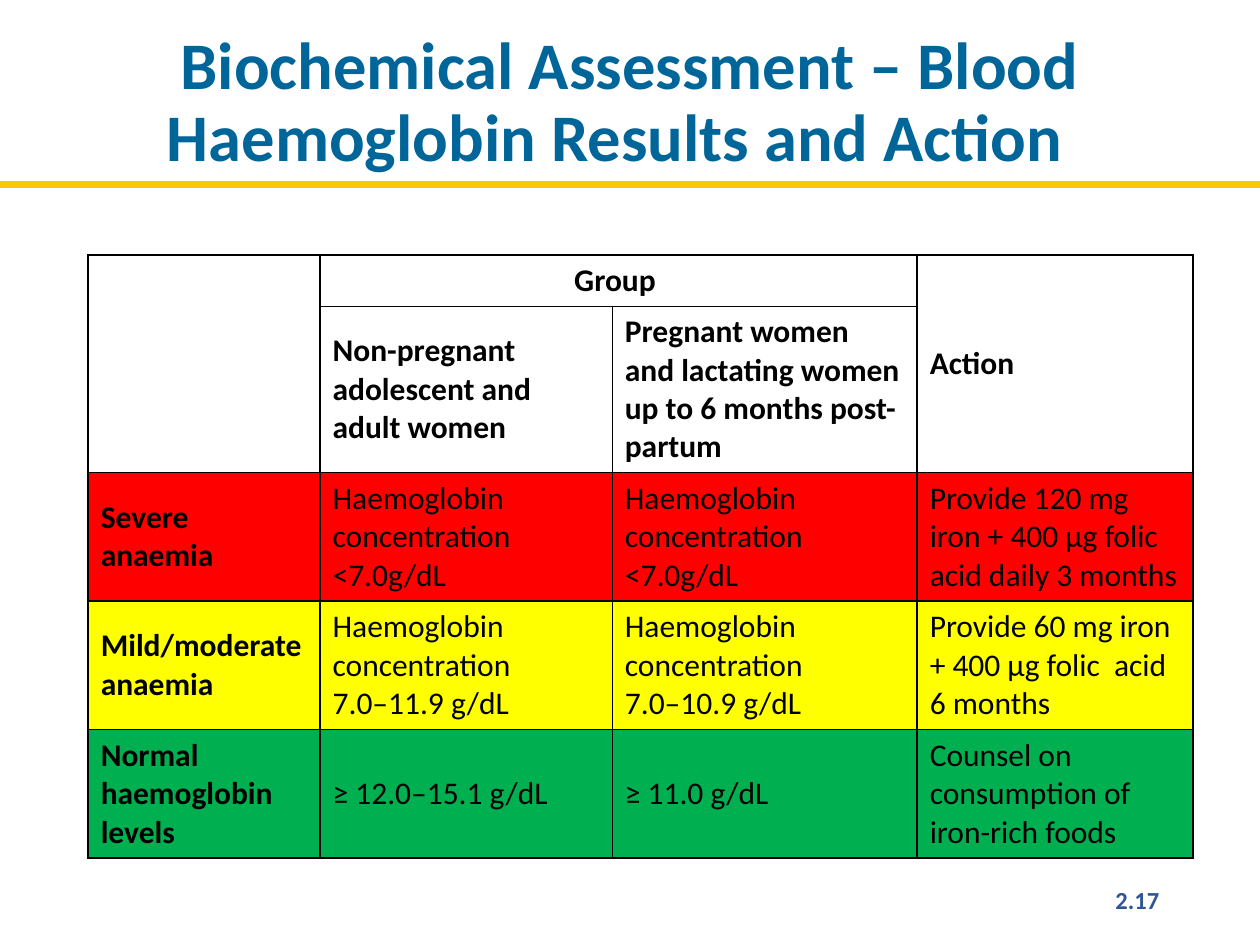
from lxml import etree
from pptx import Presentation
from pptx import util as u
from pptx.dml.color import RGBColor
from pptx.enum import shapes, text
from pptx.oxml import ns

BLUE = RGBColor(0x00, 0x66, 0x99)
PAGE_BLUE = RGBColor(0x2F, 0x55, 0x97)
GOLD = RGBColor(0xFF, 0xC6, 0x0B)
BLACK = RGBColor(0x00, 0x00, 0x00)
WHITE = RGBColor(0xFF, 0xFF, 0xFF)
RED = RGBColor(0xFF, 0x00, 0x00)
YELLOW = RGBColor(0xFF, 0xFF, 0x00)
GREEN = RGBColor(0x00, 0xB0, 0x50)

COLUMN_WIDTHS = (1.84, 2.32, 2.42, 2.19)
ROW_HEIGHTS = (0.4, 1.32, 1.02, 1.02, 1.02)
ROWS = [
    (WHITE, ("", "Group ", "", "Action")),
    (WHITE, ("", "Non-pregnant adolescent and adult women",
             "Pregnant women and lactating women up to 6 months post-partum", "")),
    (RED, ("Severe anaemia",
           "Haemoglobin concentration <7.0g/dL",
           "Haemoglobin concentration <7.0g/dL",
           "Provide 120 mg iron + 400 µg folic acid daily 3 months")),
    (YELLOW, ("Mild/moderate anaemia",
              "Haemoglobin concentration\n7.0–11.9 g/dL",
              "Haemoglobin concentration\n7.0–10.9 g/dL",
              "Provide 60 mg iron + 400 µg folic  acid 6 months")),
    (GREEN, ("Normal haemoglobin levels", "≥ 12.0–15.1 g/dL", "≥ 11.0 g/dL",
             "Counsel on consumption of iron-rich foods")),
]
HEADER_ROWS = 2
# First and last cell of each merged block, as (row, column)
MERGES = [((0, 0), (1, 0)), ((0, 1), (0, 2)), ((0, 3), (1, 3))]


class SlideBuilder:
    """Holds the slide and its style; places are shares of the slide's size."""
    font_name = "Calibri"

    def __init__(self, deck):
        self.width, self.height = deck.slide_width, deck.slide_height
        self.slide = deck.slides.add_slide(deck.slide_layouts[5])

    def place(self, x, y, w, h):
        return (int(x * self.width), int(y * self.height),
                int(w * self.width), int(h * self.height))

    def format_text(self, frame, size, color, bold, align):
        for paragraph in frame.paragraphs:
            paragraph.alignment = align
            for run in paragraph.runs:
                run.font.name = self.font_name
                run.font.size = u.Pt(size)
                run.font.bold = bold
                run.font.color.rgb = color

    def rule(self, y, color, weight):
        """Draw a line across the whole slide."""
        level = int(y * self.height)
        line = self.slide.shapes.add_connector(
            shapes.MSO_CONNECTOR.STRAIGHT, 0, level, self.width, level)
        line.line.color.rgb = color
        line.line.width = u.Pt(weight)
        etree.SubElement(line._element.spPr, ns.qn("a:effectLst"))

    def title(self, wording, area):
        heading = self.slide.shapes.title
        heading.left, heading.top, heading.width, heading.height = self.place(*area)
        frame = heading.text_frame
        frame.text = wording
        frame.word_wrap = True
        frame.auto_size = text.MSO_AUTO_SIZE.NONE
        frame.vertical_anchor = text.MSO_ANCHOR.MIDDLE
        frame.margin_left = frame.margin_right = frame.margin_top = u.Inches(0.2)
        frame.margin_bottom = u.Inches(0.05)
        frame.paragraphs[0].line_spacing = 0.9
        self.format_text(frame, 38, BLUE, True, text.PP_ALIGN.CENTER)

    def label(self, wording, area):
        frame = self.slide.shapes.add_textbox(*self.place(*area)).text_frame
        frame.word_wrap = True
        frame.text = wording
        self.format_text(frame, 14, PAGE_BLUE, True, text.PP_ALIGN.RIGHT)

    def border(self, cell):
        properties = cell._tc.get_or_add_tcPr()
        for position, side in enumerate(("lnL", "lnR", "lnT", "lnB")):
            edge = etree.Element(ns.qn(f"a:{side}"), w=str(u.Pt(1)))
            fill = etree.SubElement(edge, ns.qn("a:solidFill"))
            etree.SubElement(fill, ns.qn("a:srgbClr"), val=str(BLACK))
            properties.insert(position, edge)

    def table(self, x, y):
        area = (*self.place(x, y, 0, 0)[:2],
                u.Inches(sum(COLUMN_WIDTHS)), u.Inches(sum(ROW_HEIGHTS)))
        grid = self.slide.shapes.add_table(
            len(ROW_HEIGHTS), len(COLUMN_WIDTHS), *area).table
        for column, width in zip(grid.columns, COLUMN_WIDTHS):
            column.width = u.Inches(width)
        for row, height in zip(grid.rows, ROW_HEIGHTS):
            row.height = u.Inches(height)
        for r, (color, wordings) in enumerate(ROWS):
            for c, wording in enumerate(wordings):
                cell = grid.cell(r, c)
                cell.text_frame.text = wording
                cell.vertical_anchor = text.MSO_ANCHOR.MIDDLE
                cell.fill.solid()
                cell.fill.fore_color.rgb = color
                self.border(cell)
                self.format_text(cell.text_frame, 18, BLACK,
                                 r < HEADER_ROWS or c == 0, text.PP_ALIGN.LEFT)
        for first, last in MERGES:
            grid.cell(*first).merge(grid.cell(*last))
        group = grid.cell(0, 1)
        group.vertical_anchor = text.MSO_ANCHOR.TOP
        group.text_frame.paragraphs[0].alignment = text.PP_ALIGN.CENTER


def main():
    deck = Presentation()
    deck.slide_width, deck.slide_height = u.Inches(10), u.Inches(7.5)
    builder = SlideBuilder(deck)
    builder.rule(0.195, GOLD, 4)
    builder.title("Biochemical Assessment – Blood Haemoglobin Results and Action  ",
                  (0, 0, 1, 0.2))
    builder.table(0.07, 0.27)
    builder.label("2.17", (0.71, 0.93, 0.22, 0.05))
    deck.save("out.pptx")


if __name__ == "__main__":
    main()
